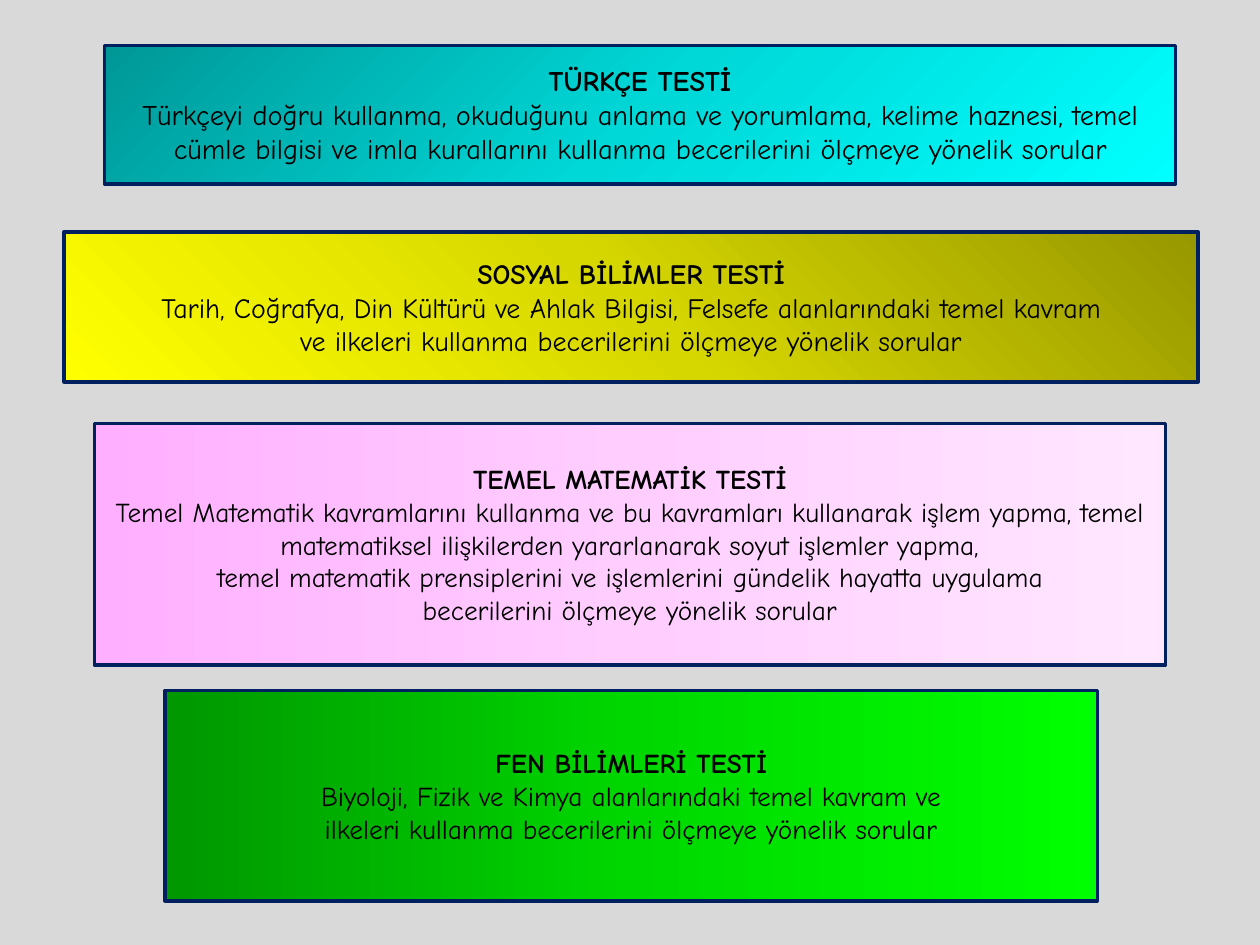
from copy import deepcopy
from dataclasses import dataclass

from pptx import Presentation
from pptx.dml.color import RGBColor as Rgb
from pptx.enum.shapes import MSO_SHAPE as Shape
from pptx.enum.text import MSO_ANCHOR as Anchor, PP_ALIGN as Align
from pptx.oxml.ns import qn
from pptx.util import Inches, Pt

CELL = Inches(0.1)  # the slide is a grid of 100 columns by 75 rows


@dataclass(frozen=True)
class Theme:
    font: str = "Comic Neue"
    background: str = "D9D9D9"
    border: str = "002060"
    border_width: float = 2
    text: str = "000000"
    large: float = 16.2
    medium: float = 16
    small: float = 15.6
    cyan: tuple = ("009797", "00D7D7", "00FFFF")
    yellow: tuple = ("979700", "D7D700", "FFFF00")
    pink: tuple = ("FFAFFF", "FFCEFF", "FFE7FF")
    green: tuple = ("009700", "00D700", "00FF00")


THEME = Theme()


@dataclass(frozen=True)
class TestPanel:
    """One test; angle is clockwise, and a newline in a paragraph is a line break."""
    column: float
    row: float
    columns: float
    rows: float
    colors: tuple
    angle: int
    size: float
    title: str
    paragraphs: tuple


PANELS = (
    TestPanel(8.3, 3.6, 85, 11, THEME.cyan, 45, THEME.large, "TÜRKÇE TESTİ", (
        "Türkçeyi doğru kullanma, okuduğunu anlama ve yorumlama, kelime haznesi, temel "
        "cümle bilgisi ve imla kurallarını kullanma becerilerini ölçmeye yönelik sorular",)),
    TestPanel(5.1, 18.4, 90, 11.9, THEME.yellow, 135, THEME.medium, "SOSYAL BİLİMLER TESTİ", (
        "Tarih, Coğrafya, Din Kültürü ve Ahlak Bilgisi, Felsefe alanlarındaki temel kavram",
        "ve ilkeleri kullanma becerilerini ölçmeye yönelik sorular")),
    TestPanel(7.5, 33.6, 85, 19.2, THEME.pink, 0, THEME.small, "TEMEL MATEMATİK TESTİ", (
        "Temel Matematik kavramlarını kullanma ve bu kavramları kullanarak işlem yapma, "
        "temel matematiksel ilişkilerden yararlanarak soyut işlemler yapma,",
        "temel matematik prensiplerini ve işlemlerini gündelik hayatta uygulama\n"
        "becerilerini ölçmeye yönelik sorular")),
    TestPanel(13.1, 54.8, 74, 16.7, THEME.green, 0, THEME.small, "FEN BİLİMLERİ TESTİ", (
        "Biyoloji, Fizik ve Kimya alanlarındaki temel kavram ve\n"
        "ilkeleri kullanma becerilerini ölçmeye yönelik sorular",)),
)


def fill_gradient(box, colors: tuple, angle: int) -> None:
    """Spread the colours evenly along a clockwise angle."""
    fill = box.fill
    fill.gradient()
    fill.gradient_angle = (360 - angle) % 360
    stops = box._element.spPr.find(qn("a:gradFill")).find(qn("a:gsLst"))
    for _ in range(len(colors) - len(stops)):
        stops.append(deepcopy(stops[0]))
    for index, (stop, color) in enumerate(zip(fill.gradient_stops, colors)):
        stop.position = index / (len(colors) - 1)
        stop.color.rgb = Rgb.from_string(color)


def write_paragraph(para, text: str, *, size: float, bold: bool = False) -> None:
    para.alignment = Align.CENTER
    for index, line in enumerate(text.split("\n")):
        if index:
            para.add_line_break()
        span = para.add_run()
        span.text = line
        span.font.name = THEME.font
        span.font.size = Pt(size)
        span.font.bold = bold
        span.font.color.rgb = Rgb.from_string(THEME.text)


def draw_panel(page, panel: TestPanel) -> None:
    place = (panel.column, panel.row, panel.columns, panel.rows)
    box = page.shapes.add_shape(Shape.RECTANGLE, *(round(cells * CELL) for cells in place))
    box.shadow.inherit = False
    fill_gradient(box, panel.colors, panel.angle)
    box.line.color.rgb = Rgb.from_string(THEME.border)
    box.line.width = Pt(THEME.border_width)

    frame = box.text_frame
    frame.word_wrap = True
    frame.vertical_anchor = Anchor.MIDDLE
    write_paragraph(frame.paragraphs[0], panel.title, size=panel.size, bold=True)
    for text in panel.paragraphs:
        write_paragraph(frame.add_paragraph(), text, size=panel.size)


def main() -> None:
    deck = Presentation()
    deck.slide_width, deck.slide_height = 100 * CELL, 75 * CELL
    page = deck.slides.add_slide(deck.slide_layouts[6])
    page.background.fill.solid()
    page.background.fill.fore_color.rgb = Rgb.from_string(THEME.background)
    for panel in PANELS:
        draw_panel(page, panel)
    deck.save("out.pptx")


if __name__ == "__main__":
    main()
